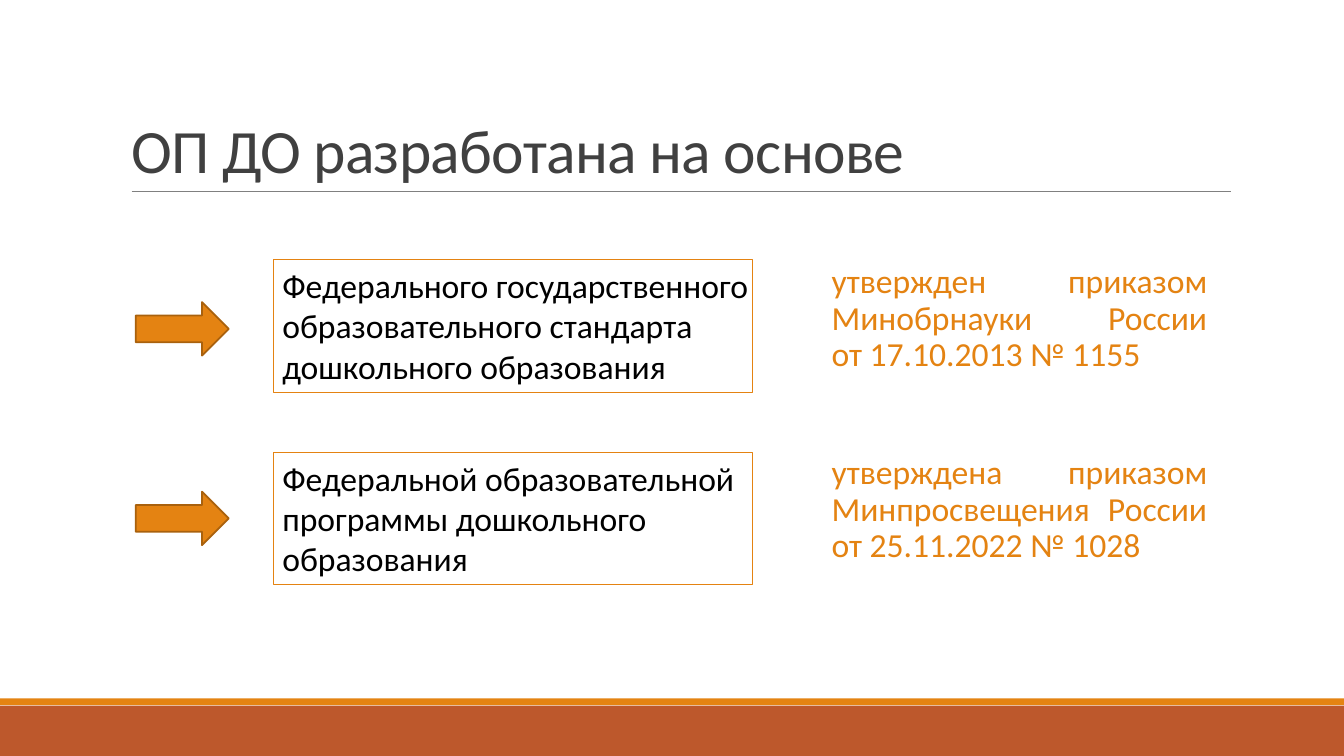
from lxml import etree
from pptx import Presentation
from pptx.dml.color import RGBColor
from pptx.enum.shapes import MSO_CONNECTOR, MSO_SHAPE
from pptx.enum.text import MSO_ANCHOR, MSO_AUTO_SIZE, PP_ALIGN
from pptx.oxml.ns import qn
from pptx.util import Pt

RECTANGLE, RIGHT_ARROW = MSO_SHAPE.RECTANGLE, MSO_SHAPE.RIGHT_ARROW
STRAIGHT = MSO_CONNECTOR.STRAIGHT
TOP, BOTTOM = MSO_ANCHOR.TOP, MSO_ANCHOR.BOTTOM
LEFT, JUSTIFY = PP_ALIGN.LEFT, PP_ALIGN.JUSTIFY
NO_AUTOFIT = MSO_AUTO_SIZE.NONE

ORANGE = RGBColor(0xE4, 0x83, 0x12)
DARK_ORANGE = RGBColor(0xA9, 0x61, 0x0D)
RUST = RGBColor(0xBD, 0x58, 0x2C)
GRAY = RGBColor(0x80, 0x80, 0x80)
CHARCOAL = RGBColor(0x40, 0x40, 0x40)
BLACK = RGBColor(0, 0, 0)

SLIDE_WIDTH, SLIDE_HEIGHT = 960, 540
ROW_HEIGHT = 94.5

# basis, order, then the tops of basis, order and arrow
ROWS = [
    ("Федерального государственного образовательного стандарта дошкольного образования",
     "утвержден приказом Минобрнауки России\nот 17.10.2013 № 1155",
     185.6, 185.6, 215.8),
    ("Федеральной образовательной программы дошкольного образования",
     "утверждена приказом Минпросвещения России\nот 25.11.2022 № 1028",
     323.2, 322, 351.2),
]


class SlideBuilder:
    font = "Calibri"
    body_size = 24

    def __init__(self, slide):
        self.slide = slide

    def place(self, shape, left, top, width, height):
        shape.left, shape.top = Pt(left), Pt(top)
        shape.width, shape.height = Pt(width), Pt(height)

    def shape(self, kind, box, fill=None, line=None, line_width=0.75):
        shape = self.slide.shapes.add_shape(kind, *map(Pt, box))
        shape.shadow.inherit = False
        if fill is None:
            shape.fill.background()
        else:
            shape.fill.solid()
            shape.fill.fore_color.rgb = fill
        if line is None:
            shape.line.fill.background()
        else:
            shape.line.color.rgb = line
            shape.line.width = Pt(line_width)
        return shape

    def rule(self, left, right, y):
        rule = self.slide.shapes.add_connector(STRAIGHT, Pt(left), Pt(y), Pt(right), Pt(y))
        rule.line.color.rgb = GRAY
        rule.line.width = Pt(0.5)
        etree.SubElement(rule._element.spPr, qn("a:effectLst"))

    def set_text(self, frame, text, size, color, align, anchor):
        frame.word_wrap = True
        frame.auto_size = NO_AUTOFIT
        frame.vertical_anchor = anchor
        paragraph = frame.paragraphs[0]
        paragraph.text = text
        paragraph.alignment = align
        paragraph.font.name = self.font
        paragraph.font.size = Pt(size)
        paragraph.font.color.rgb = color
        return paragraph

    def set_body(self, frame, text, color, align, indent):
        """Fill in an unbulleted body paragraph, indented from the frame's edge."""
        frame.margin_left = frame.margin_right = 0
        frame.margin_top = frame.margin_bottom = Pt(3.6)
        paragraph = self.set_text(frame, text, self.body_size, color, align, TOP)
        paragraph.space_before, paragraph.space_after = Pt(12), Pt(2)
        properties = paragraph._p.get_or_add_pPr()
        properties.set("marL", str(Pt(indent)))
        properties.set("indent", "0")
        properties.find(qn("a:defRPr")).addprevious(etree.Element(qn("a:buNone")))
        return paragraph

    def title(self, text, box):
        title = self.slide.shapes.title
        self.place(title, *box)
        paragraph = self.set_text(title.text_frame, text, 44, CHARCOAL, LEFT, BOTTOM)
        paragraph.line_spacing = 0.85
        for run in paragraph.runs:
            run.font._element.set("spc", "-50")

    def basis(self, text, top):
        basis = self.shape(RECTANGLE, (195.2, top, 342.6, ROW_HEIGHT), line=ORANGE)
        self.set_body(basis.text_frame, text, BLACK, LEFT, 6.5)

    def order(self, placeholder, text, top):
        self.place(placeholder, 586.8, top, 275.6, ROW_HEIGHT)
        paragraph = self.set_body(placeholder.text_frame, text, ORANGE, JUSTIFY, 7.2)
        paragraph.line_spacing = 0.9

    def arrow(self, top):
        self.shape(RIGHT_ARROW, (97, top, 66.4, 38.2), ORANGE, DARK_ORANGE, 1.25)


def main():
    presentation = Presentation()
    presentation.slide_width, presentation.slide_height = Pt(SLIDE_WIDTH), Pt(SLIDE_HEIGHT)
    two_content = presentation.slide_layouts[3]
    slide = presentation.slides.add_slide(two_content)
    builder = SlideBuilder(slide)

    builder.shape(RECTANGLE, (0, 504, SLIDE_WIDTH, 36), RUST)
    builder.shape(RECTANGLE, (0, 498.8, SLIDE_WIDTH, 5), ORANGE)
    builder.rule(94, 879, 136.8)
    builder.title("ОП ДО разработана на основе", (86.4, 22.6, 792, 114.2))

    order_placeholders = [slide.placeholders[1], slide.placeholders[2]]
    for placeholder, row in zip(order_placeholders, ROWS):
        basis, order, basis_top, order_top, arrow_top = row
        builder.basis(basis, basis_top)
        builder.order(placeholder, order, order_top)
        builder.arrow(arrow_top)

    presentation.save("out.pptx")


if __name__ == "__main__":
    main()
